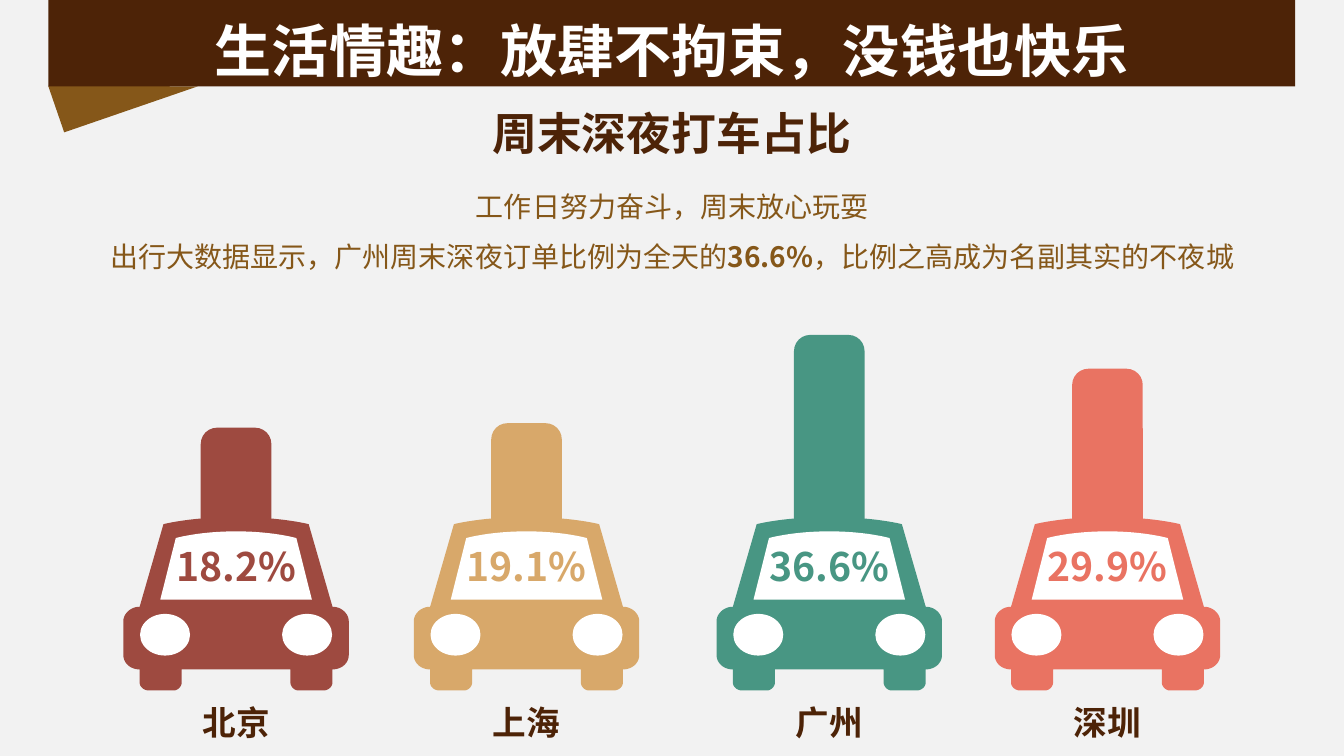
"""Build the slide on the share of weekend late-night taxi rides in four cities."""
from dataclasses import dataclass

from pptx import Presentation
from pptx import oxml
from pptx.dml.color import RGBColor
from pptx.enum import shapes, text
from pptx.oxml import ns
from pptx.util import Cm, Pt


@dataclass(frozen=True)
class Theme:
    font: str = "Noto Sans CJK SC"
    paper: str = "F2F2F2"
    white: str = "FFFFFF"
    dark: str = "4D2307"
    brown: str = "855719"
    title: float = 40.8
    heading: float = 32
    value: float = 28
    city: float = 24
    body: float = 20


T = Theme()
CITIES = [
    ("北京", 18.2, 5.95, "9E4A40"),
    ("上海", 19.1, 13.27, "D8A86A"),
    ("广州", 36.6, 20.9, "489683"),
    ("深圳", 29.9, 27.91, "E97362"),
]
TOP_VALUE = max(city[1] for city in CITIES)
BAR_WIDTH, BAR_BOTTOM, TALLEST_BAR = 1.78, 13.09, 4.65

BODY = [
    [(0, 13.03)],
    [(1.16, 13.03), (1.83, 13.21), (1.83, 13.21)],
    [(2.43, 15.29)],
    [(2.66, 15.29), (2.84, 15.47), (2.84, 15.65)],
    [(2.84, 16.51)],
    [(2.84, 16.71), (2.66, 16.87), (2.43, 16.87)],
    [(2.43, 17.2)],
    [(2.43, 17.3), (2.33, 17.4), (2.2, 17.4)],
    [(1.57, 17.4)],
    [(1.47, 17.4), (1.37, 17.3), (1.37, 17.2)],
    [(1.37, 16.87)],
]
WINDSCREEN = [
    [(0, 13.39)],
    [(0.94, 13.39), (1.52, 13.56), (1.52, 13.56)],
    [(1.91, 15.11)],
]


def bezier(points, t):
    """Return the point at t on the curve with these control points."""
    while len(points) > 1:
        points = [(a + (c - a) * t, b + (d - b) * t)
                  for (a, b), (c, d) in zip(points, points[1:])]
    return points[0]


def mirrored_outline(segments, steps=12):
    """Flatten the right half of an outline and add its left half."""
    half = list(segments[0])
    for seg in segments[1:]:
        n = steps if len(seg) > 1 else 1
        curve = [half[-1], *seg]
        half += [bezier(curve, i / n) for i in range(1, n + 1)]
    return half + [(-x, y) for x, y in reversed(half[1:])]


def paint(sp, color):
    """Give a shape a plain fill without line or shadow."""
    sp.fill.solid()
    sp.fill.fore_color.rgb = RGBColor.from_string(color)
    sp.line.fill.background()
    sp.shadow.inherit = False
    return sp


def add_preset(parent, kind, left, top, width, height, color):
    """Add a painted preset shape, measured in centimetres."""
    sp = parent.shapes.add_shape(kind, Cm(left), Cm(top), Cm(width), Cm(height))
    return paint(sp, color)


def add_outline(parent, segments, cx, color):
    """Add a symmetric freeform centred on cx."""
    pts = [(Cm(cx + x), Cm(y)) for x, y in mirrored_outline(segments)]
    fb = parent.shapes.build_freeform(*pts[0])
    fb.add_line_segments(pts[1:], close=True)
    return paint(fb.convert_to_shape(), color)


def write(tf, content, *, size, color, bold=False, spacing=None):
    """Write centred lines; a stretch between asterisks switches bold."""
    for i, line in enumerate(content.split("\n")):
        p = tf.add_paragraph() if i else tf.paragraphs[0]
        p.alignment = text.PP_ALIGN.CENTER
        if spacing:
            p.line_spacing = spacing
        for j, part in enumerate(line.split("*")):
            r = p.add_run()
            r.text = part
            r.font.size = Pt(size)
            r.font.bold = bold != bool(j % 2)
            r.font.color.rgb = RGBColor.from_string(color)
            r.font.name = T.font
            ea = oxml.parse_xml(f'<a:ea {ns.nsdecls("a")} typeface="{T.font}"/>')
            r.font.fill  # noqa
            r._r.get_or_add_rPr().append(ea)


def add_text(s, content, left, top, width, height, *, wrap=True, **fmt):
    """Add a text box that grows with its text."""
    tf = s.shapes.add_textbox(Cm(left), Cm(top), Cm(width), Cm(height)).text_frame
    tf.word_wrap = wrap
    tf.auto_size = text.MSO_AUTO_SIZE.SHAPE_TO_FIT_TEXT
    write(tf, content, **fmt)


def add_banner(s, content):
    """Turn the title placeholder into a slanted banner with a folded end."""
    fold = add_preset(s, shapes.MSO_SHAPE.RIGHT_TRIANGLE, 1.32, 1.55, 3.56, 1.24, T.brown)
    fold.rotation = 341
    sp = s.shapes.title
    sp.left, sp.top, sp.width, sp.height = Cm(1.22), Cm(0), Cm(31.42), Cm(2.18)
    sp.element.spPr.insert(1, oxml.parse_xml(
        f'<a:prstGeom {ns.nsdecls("a")} prst="parallelogram"><a:avLst>'
        '<a:gd name="adj" fmla="val 54200"/></a:avLst></a:prstGeom>'))
    sp.fill.solid()
    sp.fill.fore_color.rgb = RGBColor.from_string(T.dark)
    tf = sp.text_frame
    tf.auto_size = text.MSO_AUTO_SIZE.NONE
    tf.vertical_anchor = text.MSO_ANCHOR.MIDDLE
    tf.margin_left = tf.margin_right = tf.margin_bottom = 0
    tf.margin_top = Cm(0.3)
    write(tf, content, size=T.title, color=T.white, bold=True)
    sp.element.getparent().append(sp.element)


def add_car(s, cx, color, value):
    """Add a grouped car with its value on the windscreen."""
    car = s.shapes.add_group_shape()
    add_outline(car, BODY, cx, color)
    tf = add_outline(car, WINDSCREEN, cx, T.white).text_frame
    tf.word_wrap = False
    tf.vertical_anchor = text.MSO_ANCHOR.MIDDLE
    write(tf, f"{value}%", size=T.value, color=color, bold=True)
    for side in (-1, 1):
        add_preset(car, shapes.MSO_SHAPE.OVAL, cx + side * 1.79 - 0.63, 15.47, 1.26, 1.05, T.white)


def add_city(s, name, value, cx, color):
    """Add one city's bar, car and name."""
    height = TALLEST_BAR * value / TOP_VALUE
    bar = add_preset(s, shapes.MSO_SHAPE.ROUND_2_SAME_RECTANGLE, cx - BAR_WIDTH / 2,
                     BAR_BOTTOM - height, BAR_WIDTH, height, color)
    bar.adjustments[0] = 0.23
    add_car(s, cx, color, value)
    add_text(s, name, cx - 1.12, 17.55, 2.24, 1.27, wrap=False,
             size=T.city, color=T.dark, bold=True)


def main():
    """Build and save the slide."""
    prs = Presentation()
    prs.slide_width, prs.slide_height = Cm(33.87), Cm(19.05)
    s = prs.slides.add_slide(prs.slide_layouts[5])
    s.background.fill.solid()
    s.background.fill.fore_color.rgb = RGBColor.from_string(T.paper)
    add_banner(s, "生活情趣：放肆不拘束，没钱也快乐")
    add_text(s, "周末深夜打车占比", 3.05, 2.54, 27.76, 1.62,
             size=T.heading, color=T.dark, bold=True)
    add_text(s, "工作日努力奋斗，周末放心玩耍\n"
             "出行大数据显示，广州周末深夜订单比例为全天的*36.6%*，比例之高成为名副其实的不夜城",
             2.29, 4.22, 29.31, 2.82, size=T.body, color=T.brown, spacing=1.5)
    for city in CITIES:
        add_city(s, *city)
    prs.save("out.pptx")


if __name__ == "__main__":
    main()
